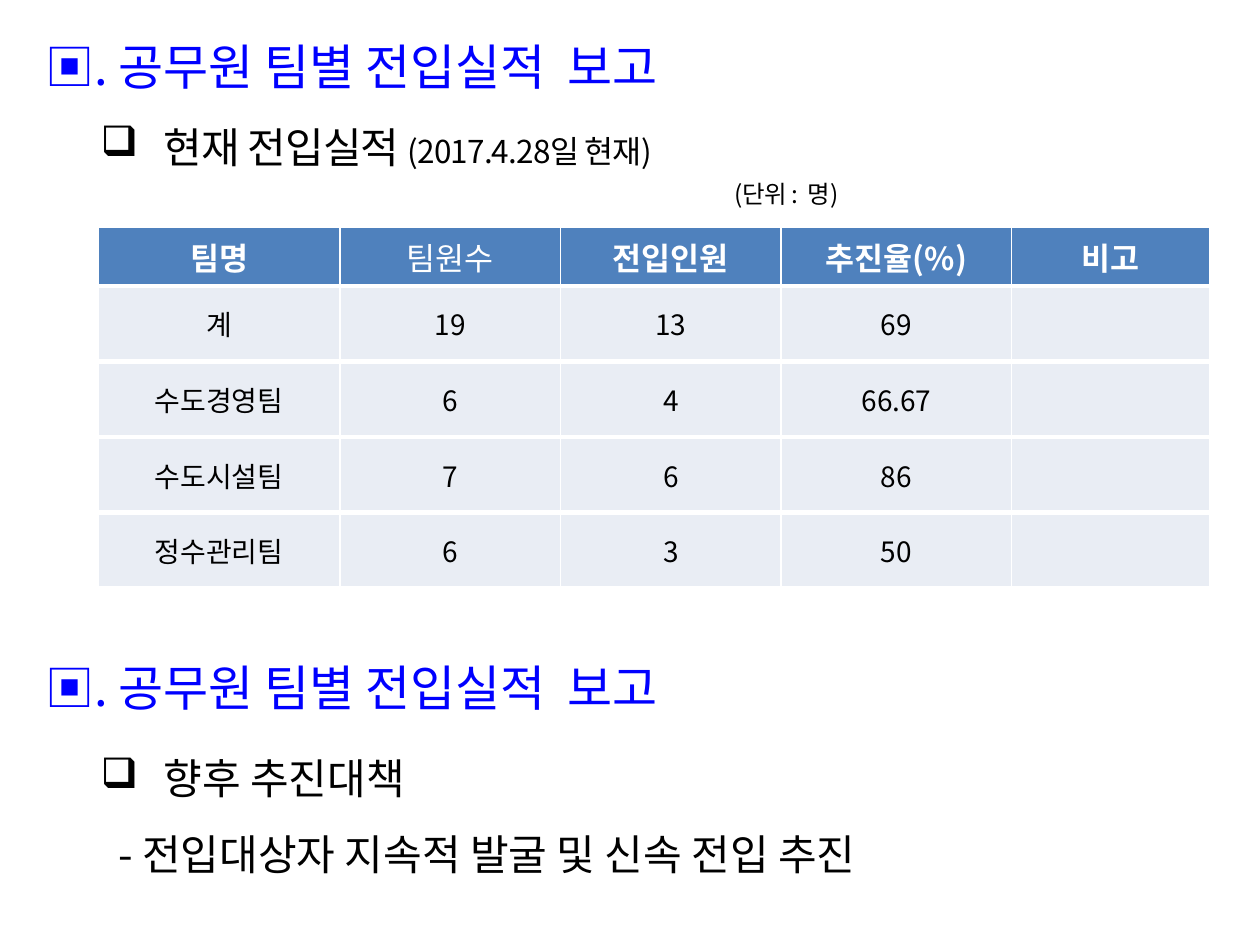
from pptx import Presentation
from pptx.dml.color import RGBColor
from pptx.enum.text import MSO_ANCHOR, MSO_AUTO_SIZE, PP_ALIGN
from pptx.oxml.ns import qn
from pptx.util import Inches, Pt
from lxml import etree

TOP, MIDDLE = MSO_ANCHOR.TOP, MSO_ANCHOR.MIDDLE
LEFT, CENTER = PP_ALIGN.LEFT, PP_ALIGN.CENTER
NO_FIT = MSO_AUTO_SIZE.NONE

THEME = {
    "font": "Noto Sans CJK KR",
    "blue": "0000FF", "black": "000000", "white": "FFFFFF",
    "head": "4F81BD", "body": "E9EDF4",
    "title": 28, "sub": 24, "date": 18, "unit": 14, "cell": 16,
}

HEADING = "▣. 공무원 팀별 전입실적  보고"
# Each line: runs (text, size), left indent, bullet, line height in points
STATUS = [
    ([("현재 전입실적 ", "sub"), ("(2017.4.28일 현재)", "date")], 1, "❑", 34),
    ([("(단위 :  명)", "unit")], 5.53, None, 21),
]
PLAN = [
    ([("향후 추진대책", "sub")], 1, "❑", 43),
    ([("- 전입대상자 지속적 발굴 및 신속 전입 추진", "sub")], 0.64, None, 43),
]
ROWS = [
    ("팀명", "팀원수", "전입인원", "추진율(%)", "비고"),
    ("계", "19", "13", "69", ""),
    ("수도경영팀", "6", "4", "66.67", ""),
    ("수도시설팀", "7", "6", "86", ""),
    ("정수관리팀", "6", "3", "50", ""),
]
PLAIN_HEAD = "팀원수"
WIDTHS = [1.92, 1.75, 1.75, 1.83, 1.57]
HEIGHTS = [0.47] + [0.6] * 4
BOX_X, BOX_W = 0.2, 9.6


def add_run(para, text, size, color, bold=False, track=0):
    run = para.add_run()
    run.text = text
    font = run.font
    font.size, font.bold = Pt(THEME[size]), bold
    font.name = THEME["font"]
    font.color.rgb = RGBColor.from_string(THEME[color])
    props = run._r.get_or_add_rPr()
    etree.SubElement(props, qn("a:ea"), typeface=THEME["font"])
    if track:
        props.set("spc", str(int(track * 100)))


def set_indent(para, left, first):
    props = para._p.get_or_add_pPr()
    props.set("marL", str(Inches(left)))
    props.set("indent", str(Inches(first)))
    return props


def set_bullet(props, mark):
    tint = etree.SubElement(props, qn("a:buClr"))
    etree.SubElement(tint, qn("a:srgbClr"), val=THEME["black"])
    etree.SubElement(props, qn("a:buChar"), char=mark)


def set_frame(shape, top, height):
    shape.left, shape.top = Inches(BOX_X), Inches(top)
    shape.width, shape.height = Inches(BOX_W), Inches(height)
    frame = shape.text_frame
    frame.word_wrap, frame.auto_size = True, NO_FIT
    frame.vertical_anchor = TOP
    return frame


def fill_heading(shape, top):
    para = set_frame(shape, top, 0.66).paragraphs[0]
    para.alignment = LEFT
    para.line_spacing, para.space_before = 1.0, Pt(0)
    set_indent(para, 0.56, -0.5)
    add_run(para, HEADING, "title", "blue")


def add_lines(slide, lines, top, height, track=0):
    frame = set_frame(slide.shapes.add_textbox(0, 0, 0, 0), top, height)
    for i, (runs, left, mark, pitch) in enumerate(lines):
        para = frame.add_paragraph() if i else frame.paragraphs[0]
        para.line_spacing = Pt(pitch)
        props = set_indent(para, left, -0.5 if mark else 0)
        if mark:
            set_bullet(props, mark)
        for text, size in runs:
            add_run(para, text, size, "black", track=track)


def set_borders(cell, is_head):
    props = cell._tc.get_or_add_tcPr()
    sides = [("lnL", 1), ("lnR", 1), ("lnT", 1 if is_head else 3), ("lnB", 3)]
    for at, (side, width) in enumerate(sides):
        line = etree.Element(qn("a:" + side), w=str(Pt(width)))
        fill = etree.SubElement(line, qn("a:solidFill"))
        etree.SubElement(fill, qn("a:srgbClr"), val=THEME["white"])
        props.insert(at, line)


def add_team_table(slide):
    table = slide.shapes.add_table(
        len(ROWS), len(WIDTHS), Inches(0.78), Inches(1.8),
        Inches(sum(WIDTHS)), Inches(sum(HEIGHTS))).table
    for col, width in zip(table.columns, WIDTHS):
        col.width = Inches(width)
    for r, (row, height) in enumerate(zip(ROWS, HEIGHTS)):
        table.rows[r].height = Inches(height)
        is_head = r == 0
        for c, text in enumerate(row):
            cell = table.cell(r, c)
            cell.vertical_anchor = MIDDLE
            cell.fill.solid()
            cell.fill.fore_color.rgb = RGBColor.from_string(
                THEME["head" if is_head else "body"])
            set_borders(cell, is_head)
            para = cell.text_frame.paragraphs[0]
            para.alignment = CENTER
            if is_head:
                add_run(para, text, "date", "white", text != PLAIN_HEAD)
            elif text:
                add_run(para, text, "cell", "black")


def main():
    deck = Presentation()
    deck.slide_width, deck.slide_height = Inches(10), Inches(7.5)
    slide = deck.slides.add_slide(deck.slide_layouts[5])
    fill_heading(slide.shapes.title, 0.24)
    add_lines(slide, STATUS, 0.84, 0.87, track=-0.5)
    add_team_table(slide)
    fill_heading(slide.shapes.add_textbox(0, 0, 0, 0), 5.17)
    add_lines(slide, PLAN, 5.73, 1.3)
    deck.save("out.pptx")


if __name__ == "__main__":
    main()
